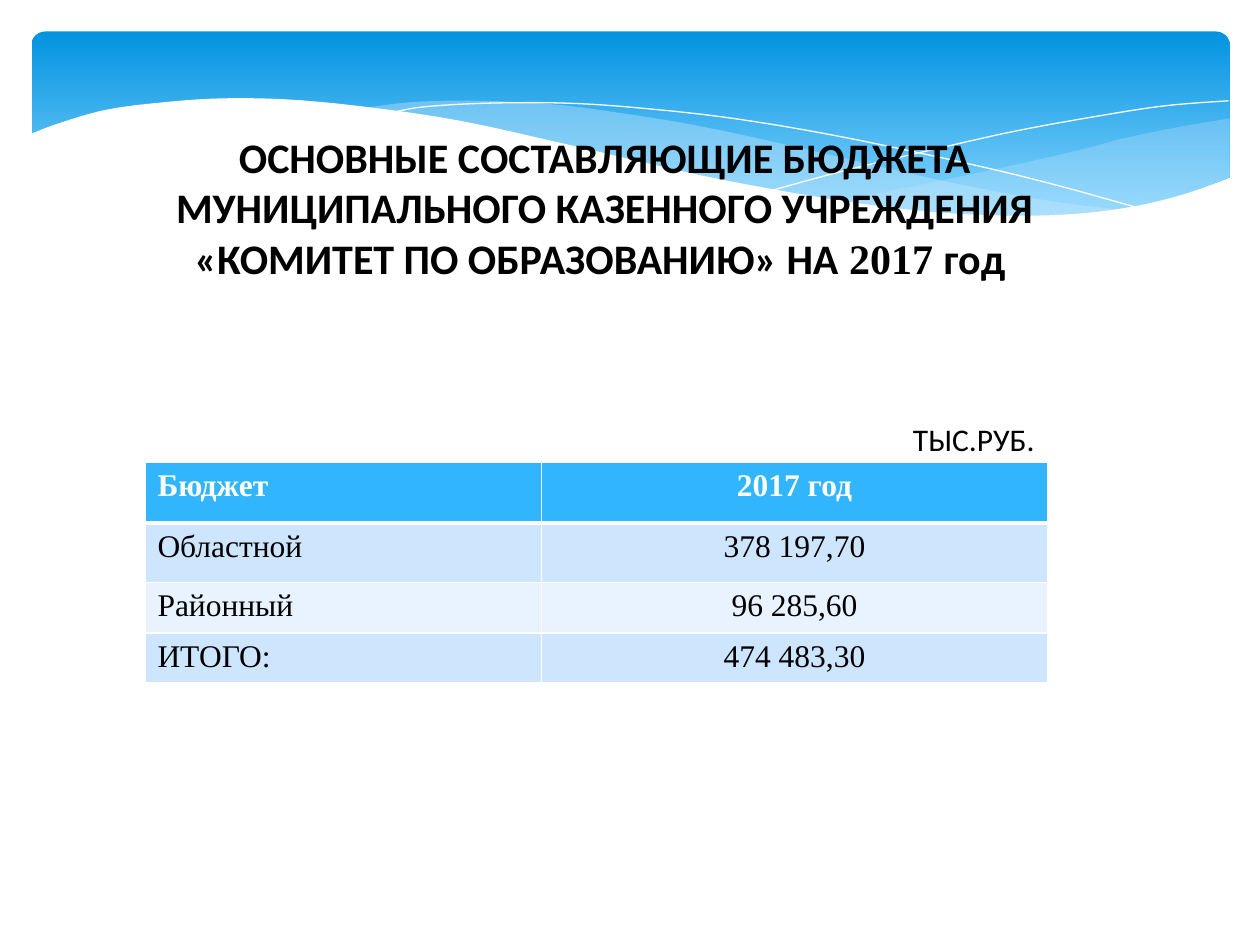
from lxml import etree
from pptx import Presentation
from pptx.dml.color import RGBColor
from pptx.enum.shapes import MSO_SHAPE
from pptx.enum.text import MSO_ANCHOR, PP_ALIGN
from pptx.oxml.ns import qn
from pptx.util import Pt

ROUNDED = MSO_SHAPE.ROUNDED_RECTANGLE
TOP = MSO_ANCHOR.TOP
LEFT, CENTER, RIGHT = PP_ALIGN.LEFT, PP_ALIGN.CENTER, PP_ALIGN.RIGHT

WHITE = RGBColor(0xFF, 0xFF, 0xFF)
BLACK = RGBColor(0x00, 0x00, 0x00)
BANNER_TOP = RGBColor(0x02, 0x93, 0xE0)
BANNER_BOTTOM = RGBColor(0x83, 0xD3, 0xFE)
WAVE = RGBColor(0xC6, 0xE7, 0xFC)
HEADER = RGBColor(0x31, 0xB6, 0xFD)
BAND_DARK = RGBColor(0xCE, 0xE5, 0xFE)
BAND_LIGHT = RGBColor(0xE8, 0xF3, 0xFF)

SANS, SERIF = "Calibri", "Times New Roman"

# Each wave is a list of smooth edges; each edge lists its knots in points.
RIGHT_WAVE = [
    [(702.7, 67.7), (673, 72.7), (641.5, 79.2), (620, 85), (579.6, 94.3),
     (525, 105.8), (476, 115.2)],
    [(476, 115.2), (507.6, 118.8), (545, 122.4), (578, 123.8), (615, 122.4),
     (645.8, 118.8), (673, 112.3), (702.7, 101.5)],
]
MIDDLE_WAVE = [
    [(206, 62), (236, 58.3), (273.6, 57.6), (318, 59.8), (360.7, 65.5),
     (399.6, 72), (453, 83.5), (508.3, 96.5), (558, 107.3), (602.6, 115.2),
     (643, 120.2)],
    [(643, 120.2), (617, 123.1), (581, 124.6), (538.6, 122.4), (489.6, 117.4),
     (432.7, 108), (381.6, 97.2), (323.3, 83.5), (275.8, 72.7), (232.6, 65.5),
     (206, 62)],
]
FALLING_LINE = [
    [(222.5, 64.8), (241.2, 61.2), (278.6, 59), (324, 59), (367.2, 61.9),
     (419, 67.7), (478.8, 77.8), (547.2, 92.2), (598.3, 104.4), (653, 119.5)],
]
RISING_LINE = [
    [(441.4, 108.7), (483.8, 97.2), (538.6, 84.2), (580.3, 74.9),
     (623.5, 67), (665.3, 60.5), (702, 57.6)],
]
WHITE_WAVE = [
    [(703.4, 101.5), (676.8, 110.9), (647.3, 118.1), (612, 122.4), (571, 123.1),
     (522.7, 120.2), (465.8, 112.3), (399.6, 100), (321.8, 82), (262.8, 69),
     (210.2, 61.2), (165.6, 56.9), (127.4, 56.2), (95, 58.3), (61.2, 62.6),
     (33.1, 70.6), (16.6, 77)],
    [(16.6, 161.3), (703.4, 161.3)],
]

BUDGET = [
    ("Бюджет", "2017 год"),
    ("Областной", "378 197,70"),
    ("Районный", "96 285,60"),
    ("ИТОГО:", "474 483,30"),
]
COLUMN_WIDTHS = (226.5, 289.5)
ROW_HEIGHTS = (34.5, 34, 28.8, 28.8)


def smooth(knots, steps=6):
    """Sample a Catmull-Rom spline that passes through the knots."""
    padded = [knots[0], *knots, knots[-1]]
    points = [knots[0]]
    for a, b, c, d in zip(padded, padded[1:], padded[2:], padded[3:]):
        for step in range(1, steps + 1):
            t = step / steps
            points.append(tuple(
                (2 * q + (r - p) * t + (2 * p - 5 * q + 4 * r - s) * t ** 2
                 + (3 * q - p - 3 * r + s) * t ** 3) / 2
                for p, q, r, s in zip(a, b, c, d)))
    return points


def add_outline(slide, edges, closed):
    points = [(Pt(x), Pt(y)) for edge in edges for x, y in smooth(edge)]
    builder = slide.shapes.build_freeform(*points[0])
    builder.add_line_segments(points[1:], close=closed)
    outline = builder.convert_to_shape()
    outline.shadow.inherit = False
    return outline


def add_wave(slide, edges, color, opacity=100):
    wave = add_outline(slide, edges, closed=True)
    wave.fill.solid()
    wave.fill.fore_color.rgb = color
    wave.line.fill.background()
    if opacity < 100:
        rgb = wave.fill._xPr.find(qn("a:solidFill"))[0]
        etree.SubElement(rgb, qn("a:alpha"), val=str(opacity * 1000))


def add_hairline(slide, edges):
    hairline = add_outline(slide, edges, closed=False)
    hairline.fill.background()
    hairline.line.color.rgb = WHITE
    hairline.line.width = Pt(0)


def add_banner(slide):
    banner = slide.shapes.add_shape(ROUNDED, Pt(18), Pt(18), Pt(684.7), Pt(112.3))
    banner.adjustments[0] = 0.07
    banner.shadow.inherit = False
    banner.line.fill.background()
    banner.fill.gradient()
    banner.fill.gradient_angle = 270
    stops = banner.fill.gradient_stops
    for stop, color, position in zip(stops, (BANNER_TOP, BANNER_BOTTOM), (0, 0.9)):
        stop.color.rgb = color
        stop.position = position


def add_run(paragraph, text, size, font, color=BLACK, bold=False):
    run = paragraph.add_run()
    run.text = text
    run.font.size = Pt(size)
    run.font.name = font
    run.font.color.rgb = color
    run.font.bold = bold


def set_title(slide):
    title = slide.shapes.title
    title.left, title.top, title.width, title.height = Pt(36.5), Pt(71.5), Pt(618), Pt(94.5)
    # The placeholder comes first in the layout; bring it in front of the waves.
    slide.shapes._spTree.append(title._element)
    title.text_frame.vertical_anchor = TOP
    title.text_frame.word_wrap = True
    paragraph = title.text_frame.paragraphs[0]
    paragraph.alignment = CENTER
    add_run(paragraph, "ОСНОВНЫЕ СОСТАВЛЯЮЩИЕ БЮДЖЕТА МУНИЦИПАЛЬНОГО КАЗЕННОГО "
            "УЧРЕЖДЕНИЯ «КОМИТЕТ ПО ОБРАЗОВАНИЮ» НА", 24, SANS, bold=True)
    add_run(paragraph, " 2017 ", 24, SERIF, bold=True)
    add_run(paragraph, "год ", 24, SANS, bold=True)


def set_borders(cell, bottom, top):
    properties = cell._tc.get_or_add_tcPr()
    widths = (("a:lnL", 1), ("a:lnR", 1), ("a:lnT", top), ("a:lnB", bottom))
    for index, (side, width) in enumerate(widths):
        border = etree.Element(qn(side), w=str(Pt(width)))
        fill = etree.SubElement(border, qn("a:solidFill"))
        etree.SubElement(fill, qn("a:srgbClr"), val=str(WHITE))
        properties.insert(index, border)


def add_budget_table(slide):
    table = slide.shapes.add_table(
        len(BUDGET), len(COLUMN_WIDTHS), Pt(82.8), Pt(264.3),
        Pt(sum(COLUMN_WIDTHS)), Pt(sum(ROW_HEIGHTS))).table
    for column, width in zip(table.columns, COLUMN_WIDTHS):
        column.width = Pt(width)
    for r, (row, height) in enumerate(zip(table.rows, ROW_HEIGHTS)):
        row.height = Pt(height)
        is_header = r == 0
        band = HEADER if is_header else (BAND_LIGHT, BAND_DARK)[r % 2]
        for cell, text, alignment in zip(row.cells, BUDGET[r], (LEFT, CENTER)):
            cell.fill.solid()
            cell.fill.fore_color.rgb = band
            set_borders(cell, bottom=3 if is_header else 1, top=3 if r == 1 else 1)
            paragraph = cell.text_frame.paragraphs[0]
            paragraph.alignment = alignment
            add_run(paragraph, text, 18, SERIF, WHITE if is_header else BLACK, is_header)


def add_unit_label(slide):
    label = slide.shapes.add_textbox(Pt(490.3), Pt(236.2), Pt(108), Pt(28.8))
    label.text_frame.word_wrap = True
    paragraph = label.text_frame.paragraphs[0]
    paragraph.alignment = RIGHT
    add_run(paragraph, "ТЫС.РУБ.", 18, SANS)


def main():
    presentation = Presentation()
    presentation.slide_width, presentation.slide_height = Pt(720), Pt(540)
    slide = presentation.slides.add_slide(presentation.slide_layouts[5])
    add_banner(slide)
    add_wave(slide, RIGHT_WAVE, WAVE, opacity=29)
    add_wave(slide, MIDDLE_WAVE, WAVE, opacity=40)
    add_hairline(slide, FALLING_LINE)
    add_hairline(slide, RISING_LINE)
    add_wave(slide, WHITE_WAVE, WHITE)
    set_title(slide)
    add_budget_table(slide)
    add_unit_label(slide)
    presentation.save("out.pptx")


if __name__ == "__main__":
    main()
